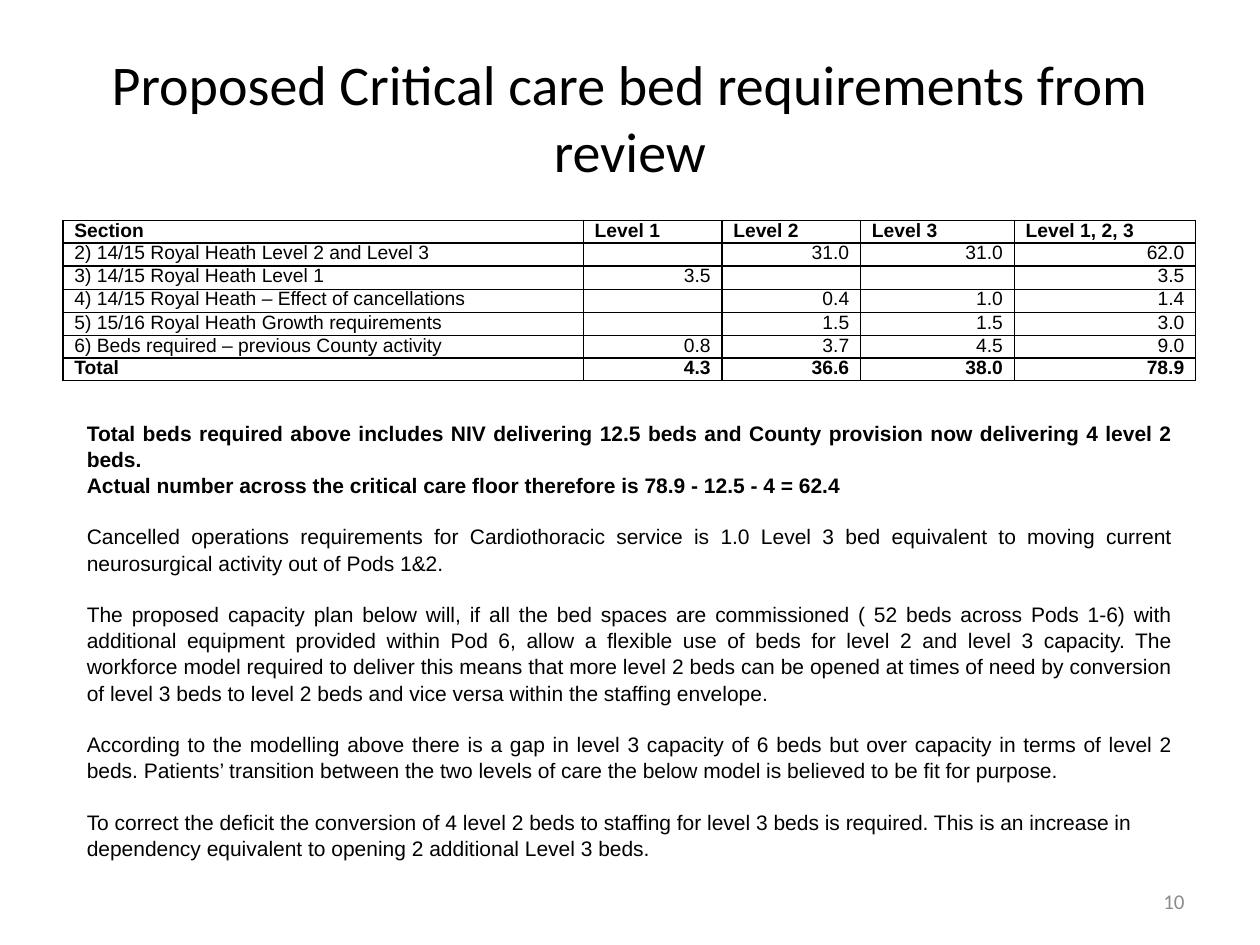
"""Build the slide on critical care bed requirements."""
from dataclasses import dataclass

import pptx
import pptx.dml.color
import pptx.enum.text
import pptx.oxml
import pptx.oxml.ns
import pptx.util

ALIGN = pptx.enum.text.PP_ALIGN
ANCHOR = pptx.enum.text.MSO_ANCHOR
WIDTH, HEIGHT = pptx.util.Inches(10), pptx.util.Inches(7.5)
BLACK, GREY = "000000", "8C8C8C"
COLUMN_SHARES = (0.413, 0.11, 0.11, 0.122, 0.144)
ROW_SHARE = 0.17 / 7.5


@dataclass(frozen=True)
class Area:
    """A rectangle in shares of the slide's size."""

    left: float
    top: float
    width: float
    height: float

    def box(self) -> tuple[int, int, int, int]:
        """Return the rectangle in slide units."""
        return (int(self.left * WIDTH), int(self.top * HEIGHT),
                int(self.width * WIDTH), int(self.height * HEIGHT))


@dataclass(frozen=True)
class Style:
    """The look of one paragraph."""

    font: str
    size: float
    color: str = BLACK
    bold: bool = False
    align: ALIGN = ALIGN.LEFT
    line_spacing: float = 1.0
    gap_before: float = 0


@dataclass(frozen=True)
class Passage:
    """One paragraph of the commentary."""

    text: str
    bold: bool = False
    align: ALIGN = ALIGN.JUSTIFY
    gap_before: float = 14.4


@dataclass(frozen=True)
class BedRow:
    """One line of the bed table."""

    section: str
    beds: tuple[str, ...]
    bold: bool = False
    beds_align: ALIGN = ALIGN.RIGHT


BED_ROWS = (
    BedRow("Section", ("Level 1", "Level 2", "Level 3", "Level 1, 2, 3"), True, ALIGN.LEFT),
    BedRow("2) 14/15 Royal Heath Level 2 and Level 3", ("", "31.0", "31.0", "62.0")),
    BedRow("3) 14/15 Royal Heath Level 1", ("3.5", "", "", "3.5")),
    BedRow("4) 14/15 Royal Heath – Effect of cancellations", ("", "0.4", "1.0", "1.4")),
    BedRow("5) 15/16 Royal Heath Growth requirements", ("", "1.5", "1.5", "3.0")),
    BedRow("6) Beds required – previous County activity", ("0.8", "3.7", "4.5", "9.0")),
    BedRow("Total", ("4.3", "36.6", "38.0", "78.9"), True),
)

COMMENTARY = (
    Passage("Total beds required above includes NIV delivering 12.5 beds and County provision "
            "now delivering 4 level 2 beds.", bold=True, gap_before=0),
    Passage("Actual number across the critical care floor therefore is 78.9 - 12.5 - 4 = 62.4",
            bold=True, gap_before=0),
    Passage("Cancelled operations requirements for Cardiothoracic service is 1.0 Level 3 bed "
            "equivalent to moving current neurosurgical activity out of Pods 1&2."),
    Passage("The proposed capacity plan below will, if all the bed spaces are commissioned "
            "( 52 beds across Pods 1-6) with additional equipment provided within Pod 6, allow "
            "a flexible use of beds for level 2 and level 3 capacity. The workforce model "
            "required to deliver this means that more level 2 beds can be opened at times of "
            "need by conversion of level 3 beds to level 2 beds and vice versa within the "
            "staffing envelope."),
    Passage("According to the modelling above there is a gap in level 3 capacity of 6 beds but "
            "over capacity in terms of level 2 beds. Patients’ transition between the two "
            "levels of care the below model is believed to be fit for purpose."),
    Passage("To correct the deficit the conversion of 4 level 2 beds to staffing for level 3 "
            "beds is required. This is an increase in dependency equivalent to opening 2 "
            "additional Level 3 beds.", align=ALIGN.LEFT),
)


def rgb(value: str) -> pptx.dml.color.RGBColor:
    """Turn a hex string into a colour."""
    return pptx.dml.color.RGBColor.from_string(value)


def write(paragraph, text: str, style: Style) -> None:
    """Fill a paragraph with text in the given style."""
    paragraph.text = text
    paragraph.alignment = style.align
    paragraph.line_spacing = style.line_spacing
    paragraph.space_before = pptx.util.Pt(style.gap_before)
    for run in paragraph.runs:
        run.font.name = style.font
        run.font.size = pptx.util.Pt(style.size)
        run.font.bold = style.bold
        run.font.color.rgb = rgb(style.color)
    if not text:
        paragraph._p.get_or_add_endParaRPr().set("sz", str(int(style.size * 100)))


def draw_text(slide, area: Area, lines: list[tuple[str, Style]], anchor: ANCHOR) -> None:
    """Draw a wrapped text box with one paragraph per line."""
    frame = slide.shapes.add_textbox(*area.box()).text_frame
    frame.word_wrap = True
    frame.vertical_anchor = anchor
    for index, (text, style) in enumerate(lines):
        paragraph = frame.add_paragraph() if index else frame.paragraphs[0]
        write(paragraph, text, style)


def draw_borders(cell, color: str, points: float) -> None:
    """Give a cell a solid line on all four sides."""
    properties = cell._tc.get_or_add_tcPr()
    for index, side in enumerate(("lnL", "lnR", "lnT", "lnB")):
        properties.insert(index, pptx.oxml.parse_xml(
            f'<a:{side} {pptx.oxml.ns.nsdecls("a")} w="{pptx.util.Pt(points)}">'
            f'<a:solidFill><a:srgbClr val="{color}"/></a:solidFill></a:{side}>'))


def draw_bed_table(slide, left: float, top: float, bed_rows: tuple[BedRow, ...]) -> None:
    """Draw the bed table on its grid of columns and rows."""
    area = Area(left, top, sum(COLUMN_SHARES), ROW_SHARE * len(bed_rows))
    table = slide.shapes.add_table(len(bed_rows), len(COLUMN_SHARES), *area.box()).table
    table.first_row = table.horz_banding = False
    for column, share in zip(table.columns, COLUMN_SHARES):
        column.width = int(share * WIDTH)
    for row, bed_row in zip(table.rows, bed_rows):
        row.height = int(ROW_SHARE * HEIGHT)
        for index, (cell, text) in enumerate(zip(row.cells, (bed_row.section, *bed_row.beds))):
            align = bed_row.beds_align if index else ALIGN.LEFT
            cell.margin_left = cell.margin_right = pptx.util.Inches(0.09)
            cell.margin_top = cell.margin_bottom = 0
            cell.fill.background()
            draw_borders(cell, BLACK, 1)
            write(cell.text_frame.paragraphs[0], text,
                  Style("Arial", 11, bold=bed_row.bold, align=align, line_spacing=0.97))


def main() -> None:
    """Build and save the slide."""
    deck = pptx.Presentation()
    deck.slide_width, deck.slide_height = WIDTH, HEIGHT
    slide = deck.slides.add_slide(deck.slide_layouts[6])
    draw_text(slide, Area(0.05, 0.04, 0.9, 1 / 6),
              [("Proposed Critical care bed requirements from review",
                Style("Calibri", 32, align=ALIGN.CENTER))], ANCHOR.MIDDLE)
    draw_bed_table(slide, 0.05, 7 / 30, BED_ROWS)
    draw_text(slide, Area(0.717, 0.927, 0.233, 0.053),
              [("10", Style("Calibri", 12, GREY, align=ALIGN.RIGHT))], ANCHOR.MIDDLE)
    draw_text(slide, Area(0.059, 0.437, 0.882, 0.471),
              [(passage.text, Style("Arial", 12, bold=passage.bold, align=passage.align,
                                    line_spacing=1.04, gap_before=passage.gap_before))
               for passage in COMMENTARY], ANCHOR.TOP)
    deck.save("out.pptx")


if __name__ == "__main__":
    main()
